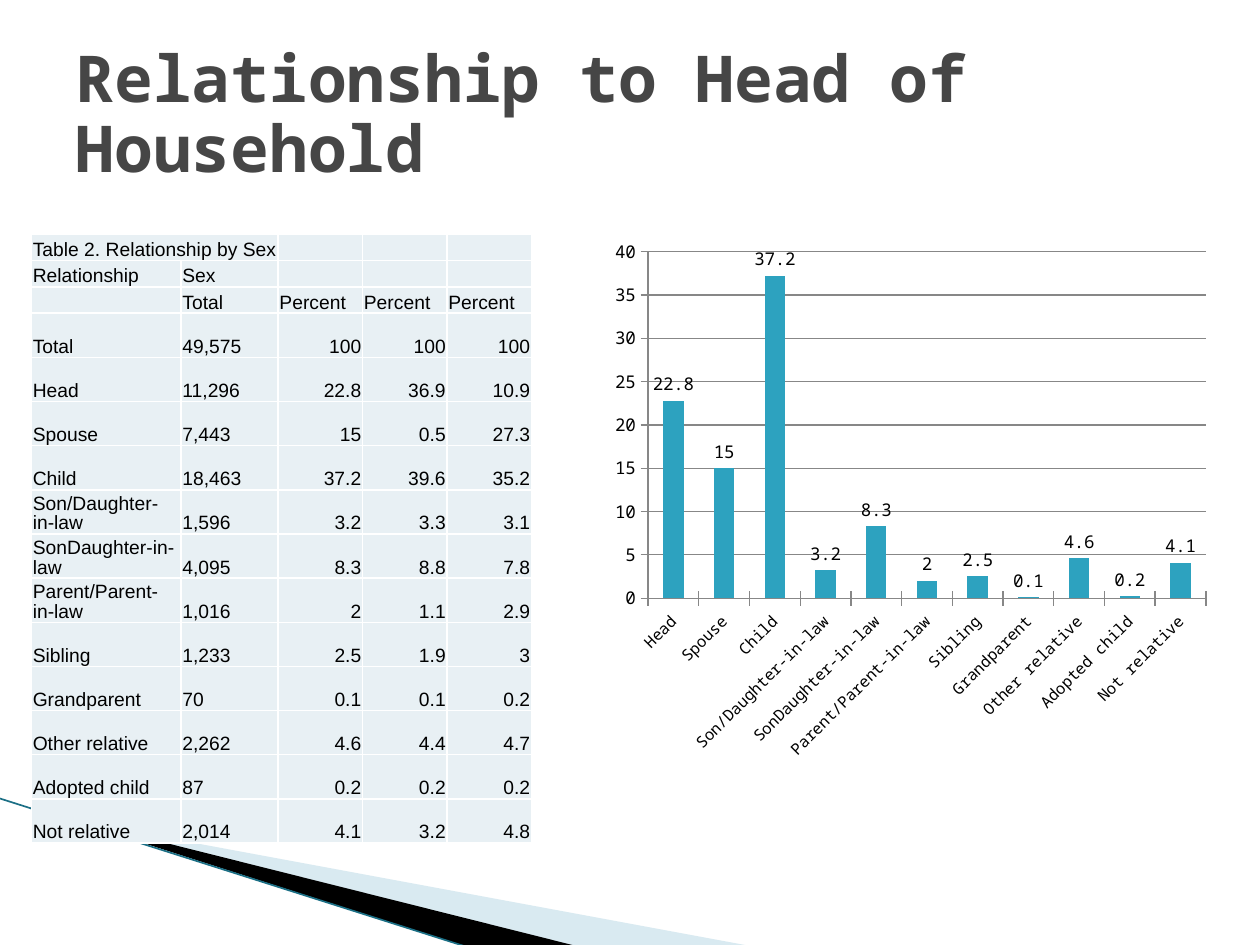
from lxml.etree import SubElement
from pptx import Presentation
from pptx.chart.data import CategoryChartData
from pptx.dml.color import RGBColor
from pptx.enum.chart import XL_CHART_TYPE, XL_LABEL_POSITION, XL_TICK_MARK
from pptx.enum.shapes import MSO_CONNECTOR
from pptx.enum.text import MSO_ANCHOR, PP_ALIGN
from pptx.oxml import parse_xml
from pptx.oxml.ns import nsdecls, qn
from pptx.util import Pt

COLORS = {
    "title": "464646", "text": "000000", "cell": "E8F0F4", "border": "FFFFFF",
    "bar": "2DA2BF", "grid": "878787", "pale": "A0CBDC", "black": "000000",
    "edge": "1B6F85",
}
RELATIONS = [
    ("Head", "11,296", 22.8, 36.9, 10.9),
    ("Spouse", "7,443", 15, 0.5, 27.3),
    ("Child", "18,463", 37.2, 39.6, 35.2),
    ("Son/Daughter-in-law", "1,596", 3.2, 3.3, 3.1),
    ("SonDaughter-in-law", "4,095", 8.3, 8.8, 7.8),
    ("Parent/Parent-in-law", "1,016", 2, 1.1, 2.9),
    ("Sibling", "1,233", 2.5, 1.9, 3),
    ("Grandparent", "70", 0.1, 0.1, 0.2),
    ("Other relative", "2,262", 4.6, 4.4, 4.7),
    ("Adopted child", "87", 0.2, 0.2, 0.2),
    ("Not relative", "2,014", 4.1, 3.2, 4.8),
]
HEADER = [
    ("Table 2. Relationship by Sex", "", "", "", ""),
    ("Relationship", "Sex", "", "", ""),
    ("", "Total", "Percent", "Percent", "Percent"),
]
ROWS = HEADER + [("Total", "49,575", 100, 100, 100)] + RELATIONS


def color(key):
    return RGBColor.from_string(COLORS[key])


def style(font, face, size, key):
    font.name = face
    font.size = Pt(size)
    font.color.rgb = color(key)


prs = Presentation()
prs.slide_width, prs.slide_height = Pt(720), Pt(540)
slide = prs.slides.add_slide(prs.slide_layouts[5])
shapes = slide.shapes

for key, points in [
    ("pale", [(39.6, 468.5), (428.4, 540.5), (328.5, 540.5), (39.6, 468)]),
    ("black", [(38.2, 467.5), (329, 540.5), (268, 541.5), (39, 468)]),
]:
    builder = shapes.build_freeform(Pt(points[0][0]), Pt(points[0][1]), scale=1.0)
    builder.add_line_segments([(Pt(x), Pt(y)) for x, y in points[1:]], close=True)
    wedge = builder.convert_to_shape()
    wedge.shadow.inherit = False
    wedge.fill.solid()
    wedge.fill.fore_color.rgb = color(key)
    wedge.line.fill.background()
    if key == "pale":
        tint = wedge.fill._xPr.find(qn("a:solidFill"))[0]
        SubElement(tint, qn("a:alpha"), val="40000")

edge = shapes.add_connector(MSO_CONNECTOR.STRAIGHT, Pt(-1), Pt(456), Pt(268), Pt(541.5))
edge.line.color.rgb = color("edge")
edge.line.width = Pt(0.95)
SubElement(edge._element.spPr, qn("a:effectLst"))

title = shapes.title
shapes._spTree.append(title._element)
title.left, title.top, title.width, title.height = Pt(36), Pt(21.6), Pt(648), Pt(90)
title.text = "Relationship to Head of Household"
title.text_frame.word_wrap = True
title.text_frame.vertical_anchor = MSO_ANCHOR.MIDDLE
heading = title.text_frame.paragraphs[0]
heading.alignment = PP_ALIGN.LEFT
heading.line_spacing = 0.9
style(heading.font, "Noto Sans Mono", 36.9, "title")
heading.font.bold = True

row_heights = [15] * len(HEADER) + [25.25] * (len(ROWS) - len(HEADER))
relations = shapes.add_table(
    len(ROWS), 5, Pt(18), Pt(134), Pt(285.75), Pt(sum(row_heights))).table
for column, width in zip(relations.columns, [85.5, 55.5, 48.25, 48.25, 48.25]):
    column.width = Pt(width)
relations.cell(0, 0).merge(relations.cell(0, 1))

for r, values in enumerate(ROWS):
    relations.rows[r].height = Pt(row_heights[r])
    for c, value in enumerate(values):
        cell = relations.cell(r, c)
        cell.text = str(value)
        cell.vertical_anchor = MSO_ANCHOR.BOTTOM
        cell.margin_left = cell.margin_right = cell.margin_top = Pt(0.75)
        cell.margin_bottom = 0
        entry = cell.text_frame.paragraphs[0]
        entry.line_spacing = 0.93
        if not isinstance(value, str):
            entry.alignment = PP_ALIGN.RIGHT
        style(entry.font, "Arial", 11, "text")
        if not value:
            SubElement(entry._p, qn("a:endParaRPr"), sz="1100")
        borders = cell._tc.get_or_add_tcPr()
        for side in ("lnL", "lnR", "lnT", "lnB"):
            borders.append(parse_xml(
                f'<a:{side} {nsdecls("a")} w="12700"><a:solidFill>'
                f'<a:srgbClr val="{COLORS["border"]}"/></a:solidFill></a:{side}>'))
        cell.fill.solid()
        cell.fill.fore_color.rgb = color("cell")

percentages = CategoryChartData()
percentages.categories = [row[0] for row in RELATIONS]
percentages.add_series("Series 1", [row[2] for row in RELATIONS])
chart = shapes.add_chart(
    XL_CHART_TYPE.COLUMN_CLUSTERED, Pt(342), Pt(131.75), Pt(354.25), Pt(304.5),
    percentages).chart
chart.has_legend = False
chart.has_title = False
style(chart.font, "Noto Sans Mono", 10, "text")

plot = chart.plots[0]
plot.vary_by_categories = False
plot.gap_width = 150
plot.has_data_labels = True
plot.data_labels.show_value = True
plot.data_labels.position = XL_LABEL_POSITION.OUTSIDE_END
style(plot.data_labels.font, "Noto Sans Mono", 10, "text")
bars = plot.series[0].format.fill
bars.solid()
bars.fore_color.rgb = color("bar")

for axis, size in [(chart.category_axis, 9), (chart.value_axis, 10)]:
    axis.major_tick_mark = XL_TICK_MARK.CROSS
    axis.minor_tick_mark = XL_TICK_MARK.NONE
    axis.format.line.color.rgb = color("grid")
    style(axis.tick_labels.font, "Noto Sans Mono", size, "text")
chart.category_axis._element.txPr.bodyPr.set("rot", "-2700000")
chart.value_axis.minimum_scale = 0
chart.value_axis.maximum_scale = 40
chart.value_axis.major_unit = 5
chart.value_axis.has_major_gridlines = True
chart.value_axis.major_gridlines.format.line.color.rgb = color("grid")

plot_area = chart._chartSpace.chart.plotArea
for layout in plot_area.findall(qn("c:layout")):
    plot_area.remove(layout)
layout = parse_xml(f'<c:layout {nsdecls("c")}><c:manualLayout/></c:layout>')
for tag, value in [("layoutTarget", "inner"), ("xMode", "edge"), ("yMode", "edge"),
                   ("x", "0.08"), ("y", "0.04"), ("w", "0.9"), ("h", "0.65")]:
    SubElement(layout[0], qn(f"c:{tag}"), val=value)
plot_area.insert(0, layout)

prs.save("out.pptx")
